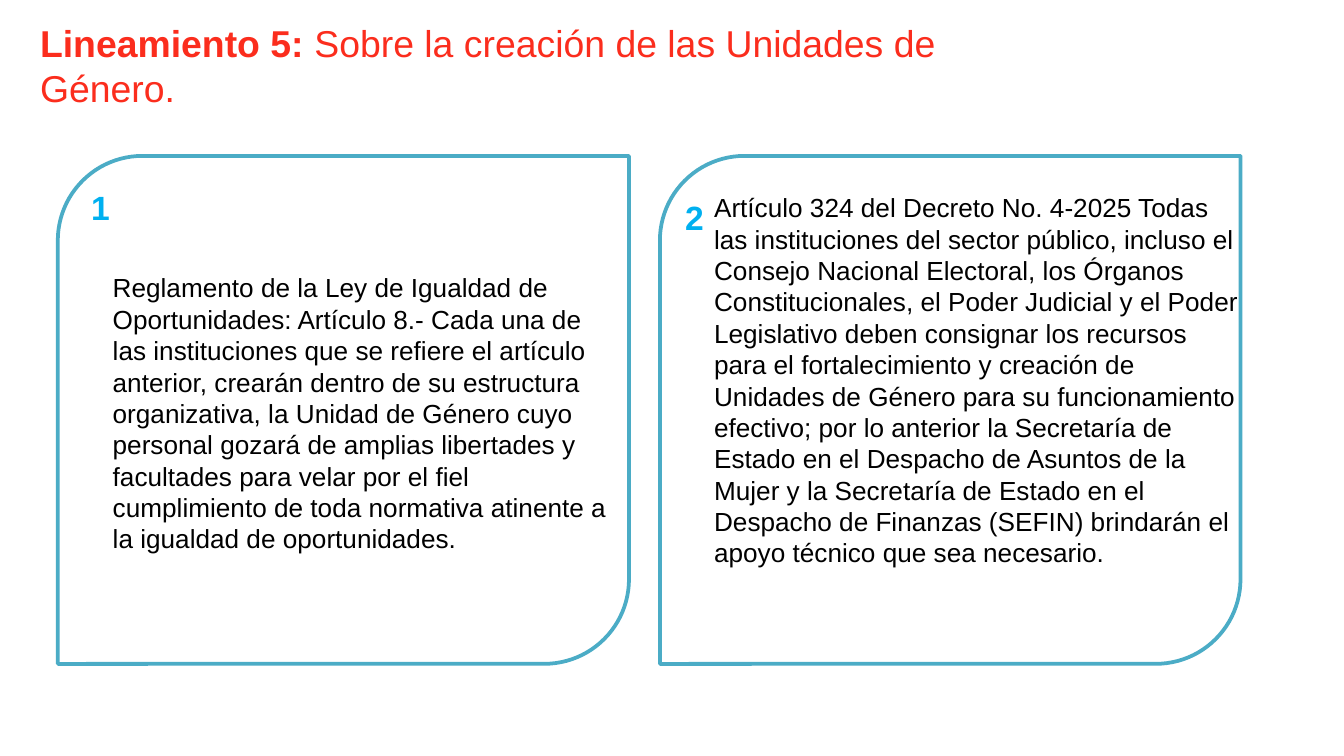
"""Build the slide on guideline 5, the creation of the gender units."""
from pptx import Presentation
from pptx import util as u
from pptx.dml.color import RGBColor
from pptx.enum import shapes, text

COLOURS = {"title": "FB2D1D", "number": "00B0F0", "body": "000000",
           "border": "4BACC6", "card": "FFFFFF"}
FORMATS = {
    "title": {"size": u.Pt(20), "name": "Arial"},
    "number": {"size": u.Pt(18), "name": "Arial", "bold": True},
    "body": {"size": u.Pt(14), "name": "Arial"},
}
WIDTH = u.Inches(10)
HEIGHT = WIDTH * 9 // 16

TITLE = [("Lineamiento 5: ", True),
         ("Sobre la creación de las Unidades de Género.", False)]
TITLE_AREA = (2, 1.7, 76, 13.87)
CARD_TOP, CARD_HEIGHT = 20.62, 67.2
NUMBER_SIZE = (3.1, 7.11)
BODY_HEIGHT = 47.82
CARDS = [
    {"columns": (4.3, 42.5), "number_at": (5.8, 23.88),
     "body_at": (7.4, 30.72), "body_width": 39.5,
     "anchor": text.MSO_ANCHOR.MIDDLE,
     "body": "Reglamento de la Ley de Igualdad de Oportunidades: Artículo 8.- "
             "Cada una de las instituciones que se refiere el artículo anterior, "
             "crearán dentro de su estructura organizativa, la Unidad de Género "
             "cuyo personal gozará de amplias libertades y facultades para velar "
             "por el fiel cumplimiento de toda normativa atinente a la igualdad "
             "de oportunidades."},
    {"columns": (49.1, 43.2), "number_at": (50, 25.1),
     "body_at": (52.15, 24.48), "body_width": 41.4,
     "anchor": text.MSO_ANCHOR.TOP,
     "body": "Artículo 324 del Decreto No. 4-2025 Todas las instituciones del "
             "sector público, incluso el Consejo Nacional Electoral, los Órganos "
             "Constitucionales, el Poder Judicial y el Poder Legislativo deben "
             "consignar los recursos para el fortalecimiento y creación de "
             "Unidades de Género para su funcionamiento efectivo; por lo anterior "
             "la Secretaría de Estado en el Despacho de Asuntos de la Mujer y la "
             "Secretaría de Estado en el Despacho de Finanzas (SEFIN) brindarán "
             "el apoyo técnico que sea necesario."},
]


def colour(role):
    return RGBColor.from_string(COLOURS[role])


def area(left, top, width, height):
    return [round(share * side / 100) for share, side in
            zip((left, top, width, height), (WIDTH, HEIGHT) * 2)]


def add_text(slide, place, runs, role, anchor, align=text.PP_ALIGN.LEFT,
             grow=text.MSO_AUTO_SIZE.SHAPE_TO_FIT_TEXT):
    frame = slide.shapes.add_textbox(*area(*place)).text_frame
    settings = {"word_wrap": True, "auto_size": grow, "vertical_anchor": anchor}
    for key, value in settings.items():
        setattr(frame, key, value)
    paragraph = frame.paragraphs[0]
    paragraph.alignment = align
    for words, bold in runs:
        run = paragraph.add_run()
        run.text = words
        for key, value in ({"bold": bold} | FORMATS[role]).items():
            setattr(run.font, key, value)
        run.font.color.rgb = colour(role)


def add_card(slide, number, card):
    left, width = card["columns"]
    frame = slide.shapes.add_shape(
        shapes.MSO_SHAPE.ROUND_2_DIAG_RECTANGLE,
        *area(left, CARD_TOP, width, CARD_HEIGHT))
    frame.shadow.inherit = False
    frame.fill.solid()
    frame.fill.fore_color.rgb = colour("card")
    frame.line.color.rgb = colour("border")
    frame.line.width = u.Pt(2)
    add_text(slide, card["number_at"] + NUMBER_SIZE, [(str(number), True)],
             "number", text.MSO_ANCHOR.BOTTOM, text.PP_ALIGN.RIGHT)
    add_text(slide, card["body_at"] + (card["body_width"], BODY_HEIGHT),
             [(card["body"], False)], "body", card["anchor"])


def main():
    deck = Presentation()
    deck.slide_width, deck.slide_height = WIDTH, HEIGHT
    slide = deck.slides.add_slide(deck.slide_layouts[6])
    add_text(slide, TITLE_AREA, TITLE, "title", text.MSO_ANCHOR.MIDDLE,
             grow=text.MSO_AUTO_SIZE.NONE)
    for number, card in enumerate(CARDS, 1):
        add_card(slide, number, card)
    deck.save("out.pptx")


if __name__ == "__main__":
    main()
